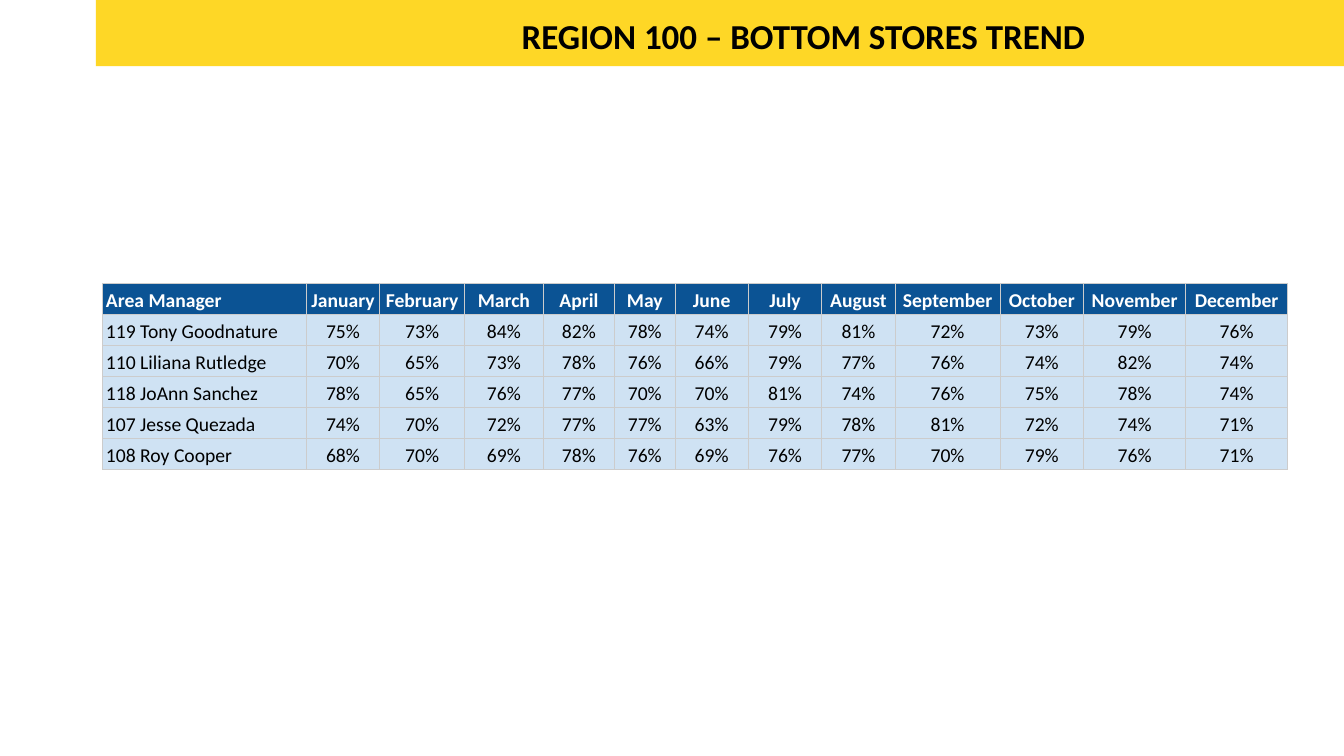
from lxml import etree
from pptx import Presentation, util as u
from pptx.dml import color
from pptx.enum import shapes, text
from pptx.oxml import ns

MONTHS = ["January", "February", "March", "April", "May", "June", "July",
          "August", "September", "October", "November", "December"]
SCORES = {
    "119 Tony Goodnature": [75, 73, 84, 82, 78, 74, 79, 81, 72, 73, 79, 76],
    "110 Liliana Rutledge": [70, 65, 73, 78, 76, 66, 79, 77, 76, 74, 82, 74],
    "118 JoAnn Sanchez": [78, 65, 76, 77, 70, 70, 81, 74, 76, 75, 78, 74],
    "107 Jesse Quezada": [74, 70, 72, 77, 77, 63, 79, 78, 81, 72, 74, 71],
    "108 Roy Cooper": [68, 70, 69, 78, 76, 69, 76, 77, 70, 79, 76, 71],
}
COLUMN_WIDTHS = [5.13, 1.85, 2.14, 1.98, 1.8, 1.52, 1.85, 1.85, 1.85, 2.64, 2.11, 2.57, 2.57]
ROW_HEIGHT = 0.71


def rgb(value):
    return color.RGBColor.from_string(value)


class Slide:
    font = "Calibri"
    yellow, blue, pale = "FED726", "0B5394", "CFE2F3"
    black, white, grid = "000000", "FFFFFF", "CCCCCC"

    def __init__(self, deck):
        self.page = deck.slides.add_slide(deck.slide_layouts[6])

    def add_words(self, para, words, size, ink, bold, align):
        para.alignment = align
        span = para.add_run()
        span.text = words
        span.font.name = self.font
        span.font.size = u.Pt(size)
        span.font.bold = bold
        span.font.color.rgb = rgb(ink)

    def band(self, left, top, width, height):
        box = self.page.shapes.add_shape(
            shapes.MSO_SHAPE.RECTANGLE, u.Cm(left), u.Cm(top), u.Cm(width), u.Cm(height))
        box.shadow.inherit = False
        box.fill.solid()
        box.fill.fore_color.rgb = rgb(self.yellow)
        box.line.fill.background()

    def title(self, words, left, top, width, height):
        box = self.page.shapes.add_textbox(u.Cm(left), u.Cm(top), u.Cm(width), u.Cm(height))
        box.text_frame.word_wrap = True
        self.add_words(box.text_frame.paragraphs[0], words, 25, self.black, True,
                       text.PP_ALIGN.CENTER)

    def borders(self, cell):
        properties = cell._tc.get_or_add_tcPr()
        for side in ("lnL", "lnR", "lnT", "lnB"):
            line = etree.SubElement(properties, ns.qn("a:" + side), w=str(u.Pt(0.75)))
            fill = etree.SubElement(line, ns.qn("a:solidFill"))
            etree.SubElement(fill, ns.qn("a:srgbClr"), val=self.grid)

    def cell(self, cell, words, header, align):
        self.borders(cell)
        cell.fill.solid()
        cell.fill.fore_color.rgb = rgb(self.blue if header else self.pale)
        cell.vertical_anchor = text.MSO_ANCHOR.BOTTOM
        cell.margin_left = cell.margin_right = u.Cm(0.08)
        cell.margin_top = cell.margin_bottom = u.Cm(0.05)
        para = cell.text_frame.paragraphs[0]
        para.line_spacing = 1.15
        self.add_words(para, words, 14, self.white if header else self.black, header, align)

    def table(self, rows, left, top):
        table = self.page.shapes.add_table(
            len(rows), len(COLUMN_WIDTHS), u.Cm(left), u.Cm(top),
            u.Cm(sum(COLUMN_WIDTHS)), u.Cm(ROW_HEIGHT * len(rows))).table
        table.horz_banding = False
        for column, width in zip(table.columns, COLUMN_WIDTHS):
            column.width = u.Cm(width)
        for r, row in enumerate(rows):
            table.rows[r].height = u.Cm(ROW_HEIGHT)
            for c, words in enumerate(row):
                align = text.PP_ALIGN.CENTER if c else text.PP_ALIGN.LEFT
                self.cell(table.cell(r, c), words, r == 0, align)


def main():
    deck = Presentation()
    deck.slide_width, deck.slide_height = u.Cm(33.87), u.Cm(19.05)
    slide = Slide(deck)
    slide.band(2.42, 0, 31.45, 1.67)
    slide.title("REGION 100 – BOTTOM STORES TREND", 6.62, 0.23, 27.25, 1.32)
    rows = [["Area Manager"] + MONTHS]
    rows += [[manager] + [f"{score}%" for score in scores] for manager, scores in SCORES.items()]
    slide.table(rows, 2.59, 7.14)
    deck.save("out.pptx")


if __name__ == "__main__":
    main()
